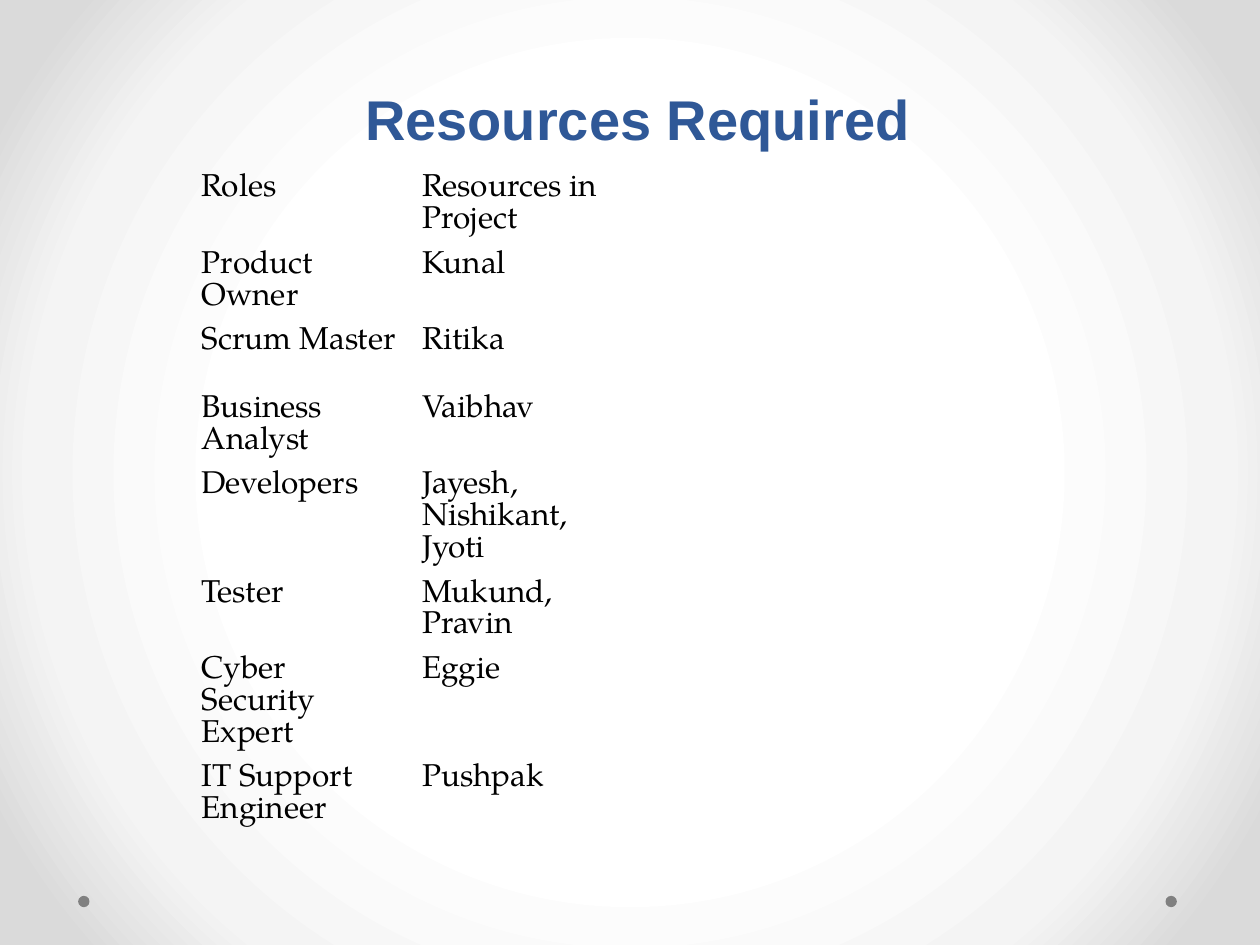
from pptx import Presentation
from pptx.dml.color import RGBColor
from pptx.enum import shapes, text
from pptx.oxml import ns, parse_xml
from pptx.util import Inches, Pt

COLORS = {"title": "2F5897", "body": "000000", "dot": "808080"}
BACKGROUND_STOPS = [(50, "FFFFFF"), (76, "F4F4F4"), (92, "DADADA")]
TITLE_FONT, BODY_FONT = "Arial", "TeX Gyre Pagella"

STAFFING = [
    ("Roles", "Resources in Project"),
    ("Product Owner", "Kunal"),
    ("Scrum Master", "Ritika"),
    ("Business Analyst", "Vaibhav"),
    ("Developers", "Jayesh, Nishikant, Jyoti"),
    ("Tester", "Mukund, Pravin"),
    ("Cyber Security Expert", "Eggie"),
    ("IT Support Engineer", "Pushpak"),
]
ROW_HEIGHTS = [0.54, 0.31, 0.54, 0.31, 0.54, 0.54, 0.54, 0.31, 0.54, 0.31, 0.31, 0.54]
COLUMN_COUNT = 4
COLUMN_WIDTH = 1.75


def rgb(role):
    return RGBColor.from_string(COLORS[role])


def style_font(font, name, size, role, bold=False):
    font.name = name
    font.size = Pt(size)
    font.bold = bold
    font.color.rgb = rgb(role)


def set_background(slide):
    """Fill the background with a circular gradient from the centre."""
    slide.background.fill.gradient()
    stops = "".join(
        f'<a:gs pos="{percent * 1000}"><a:srgbClr val="{color}"/></a:gs>'
        for percent, color in BACKGROUND_STOPS
    )
    radial = parse_xml(
        f'<a:gradFill {ns.nsdecls("a")} rotWithShape="1"><a:gsLst>{stops}</a:gsLst>'
        '<a:path path="circle"><a:fillToRect l="50000" t="50000" r="50000" b="50000"/>'
        "</a:path></a:gradFill>"
    )
    linear = slide.element.find(".//" + ns.qn("a:gradFill"))
    linear.getparent().replace(linear, radial)


def add_dot(slide, left):
    dot = slide.shapes.add_shape(
        shapes.MSO_SHAPE.OVAL, Inches(left), Inches(7.11), Inches(0.09), Inches(0.09)
    )
    dot.shadow.inherit = False
    dot.fill.solid()
    dot.fill.fore_color.rgb = rgb("dot")
    dot.line.fill.background()


def add_title(slide, wording):
    title = slide.shapes.add_textbox(Inches(0.5), Inches(0.3), Inches(9), Inches(0.95))
    frame = title.text_frame
    frame.word_wrap = True
    frame.vertical_anchor = text.MSO_ANCHOR.BOTTOM
    frame.text = wording
    paragraph = frame.paragraphs[0]
    paragraph.alignment = text.PP_ALIGN.CENTER
    paragraph.line_spacing = Pt(58)
    style_font(paragraph.runs[0].font, TITLE_FONT, 32, "title", bold=True)


def add_staffing_table(slide):
    table = slide.shapes.add_table(
        len(ROW_HEIGHTS), COLUMN_COUNT, Inches(1.5), Inches(1.33),
        Inches(COLUMN_WIDTH * COLUMN_COUNT), Inches(sum(ROW_HEIGHTS)),
    ).table
    table.first_row = False
    table.horz_banding = False
    for row, height in zip(table.rows, ROW_HEIGHTS):
        row.height = Inches(height)
    for cell in table.iter_cells():
        cell.fill.background()
    # The default table style draws white grid lines; this one has no grid.
    table_style = table._tbl.tblPr.find(ns.qn("a:tableStyleId"))
    table_style.text = "{2D5ABB26-0587-4C30-8999-92F81FD0307C}"
    for row_index, entries in enumerate(STAFFING):
        for column_index, entry in enumerate(entries):
            frame = table.cell(row_index, column_index).text_frame
            frame.text = entry
            paragraph = frame.paragraphs[0]
            paragraph.line_spacing = Pt(18.2)
            style_font(paragraph.runs[0].font, BODY_FONT, 18, "body")


def main():
    deck = Presentation()
    deck.slide_width, deck.slide_height = Inches(10), Inches(7.5)
    slide = deck.slides.add_slide(deck.slide_layouts[6])
    set_background(slide)
    for left in (9.25, 0.62):
        add_dot(slide, left)
    add_title(slide, " Resources Required")
    add_staffing_table(slide)
    deck.save("out.pptx")


if __name__ == "__main__":
    main()
